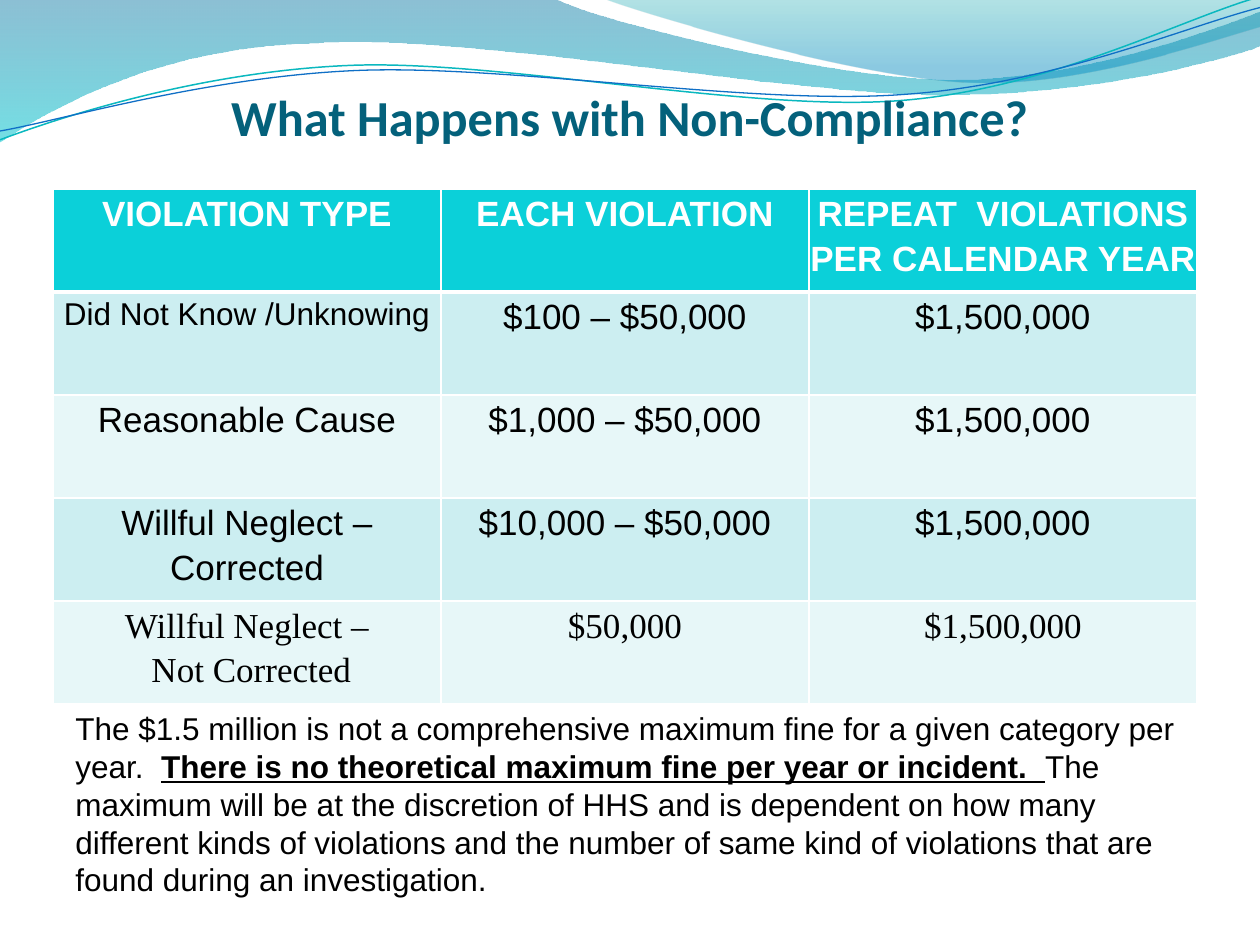
from dataclasses import dataclass

from lxml import etree
from pptx import Presentation
from pptx.dml.color import RGBColor
from pptx.enum.text import MSO_ANCHOR, MSO_AUTO_SIZE, PP_ALIGN
from pptx.oxml import parse_xml
from pptx.oxml.ns import nsdecls, qn
from pptx.util import Inches, Pt


@dataclass(frozen=True)
class Theme:
    title: str = "04617B"
    text: str = "000000"
    white: str = "FFFFFF"
    header: str = "0BD0D9"
    bands: tuple = ("CCEEF1", "E7F7F8")
    teal_line: str = "0AB8BF"
    blue_line: str = "0F6FC6"
    title_size: float = 28.8
    table_size: float = 20
    body_size: float = 18
    heading_font: str = "Calibri"
    body_font: str = "Arial"
    serif_font: str = "Times New Roman"


theme = Theme()


def add_text(paragraph, text, font=theme.body_font, size=theme.body_size,
             color=theme.text, bold=False, underline=False,
             align=PP_ALIGN.LEFT, spacing=1.0):
    paragraph.alignment = align
    paragraph.line_spacing = spacing
    run = paragraph.add_run()
    run.text = text
    run.font.name = font
    run.font.size = Pt(size)
    run.font.color.rgb = RGBColor.from_string(color)
    run.font.bold = bold
    run.font.underline = underline


def add_curve(shapes, start, segments, closed):
    """Draw lines (2 numbers) and cubic curves (6 numbers), in inches."""
    builder = shapes.build_freeform(Inches(start[0]), Inches(start[1]))
    builder.add_line_segments([(Inches(segment[-2]), Inches(segment[-1])) for segment in segments],
                              close=closed)
    shape = builder.convert_to_shape()
    shape.shadow.inherit = False
    # Turn straight segments into Bezier curves by adding their control points
    lines = list(shape.element.spPr.iter(qn("a:lnTo")))
    for line, segment in zip(lines, segments):
        if len(segment) == 6:
            line.tag = qn("a:cubicBezTo")
            for index in (0, 1):
                x, y = segment[2 * index:2 * index + 2]
                control = etree.Element(qn("a:pt"), x=str(Inches(x) - shape.left),
                                        y=str(Inches(y) - shape.top))
                line.insert(index, control)
    return shape


presentation = Presentation()
presentation.slide_width = Inches(10)
presentation.slide_height = Inches(7.5)
slide = presentation.slides.add_slide(presentation.slide_layouts[6])

# Translucent waves: start, segments, gradient stops (position, colour, opacity)
waves = [
    ((0, 0),
     [(4.4, -0.01), (4.76, 0.17, 6.64, 0.63, 7.58, 0.63), (8.53, 0.63, 9.58, 0.26, 10, 0.09),
      (10.01, 0.36), (9.83, 0.44, 8.7, 0.76, 7.46, 0.75), (6.22, 0.75, 3.82, 0.28, 2.57, 0.34),
      (1.29, 0.36, 0.46, 0.83, -0.01, 1.13)],
     [(0, "0074A1", 45), (100, "00C6CF", 55)]),
    ((4.79, -0.01),
     [(5.09, 0.11, 6.82, 0.62, 7.69, 0.65), (8.56, 0.69, 9.61, 0.32, 10, 0.21), (10, 0)],
     [(0, "00A1A9", 30), (80, "008BBF", 45)]),
]
for start, segments, stops in waves:
    wave = add_curve(slide.shapes, start, segments, closed=True)
    wave.line.fill.background()
    stop_xml = "".join(
        f'<a:gs pos="{position * 1000}"><a:srgbClr val="{color}">'
        f'<a:alpha val="{opacity * 1000}"/></a:srgbClr></a:gs>'
        for position, color, opacity in stops)
    gradient = parse_xml(f'<a:gradFill {nsdecls("a")} rotWithShape="1"><a:gsLst>{stop_xml}'
                         '</a:gsLst><a:lin ang="5400000" scaled="0"/></a:gradFill>')
    wave.element.spPr.find(qn("a:custGeom")).addnext(gradient)

# Thin wave lines
wave_lines = [
    ((0, 1.11),
     [(0.48, 0.93, 1.58, 0.57, 2.77, 0.52), (3.95, 0.47, 5.93, 0.89, 7.13, 0.8),
      (8.33, 0.71, 9.38, 0.15, 9.98, -0.02)], theme.teal_line, 0.85),
    ((0, 1.04),
     [(0.47, 0.96, 1.64, 0.61, 2.83, 0.56), (4.03, 0.51, 5.97, 0.84, 7.17, 0.75),
      (8.36, 0.67, 9.41, 0.21, 10, 0.06)], theme.blue_line, 0.75),
]
for start, segments, color, width in wave_lines:
    wave_line = add_curve(slide.shapes, start, segments, closed=False)
    wave_line.fill.background()
    wave_line.line.color.rgb = RGBColor.from_string(color)
    wave_line.line.width = Pt(width)

# Title
title_frame = slide.shapes.add_textbox(Inches(0.5), Inches(0.5), Inches(9), Inches(1.42)).text_frame
title_frame.word_wrap = True
title_frame.margin_left = title_frame.margin_right = 0
title_frame.margin_top = Inches(0.05)
title_frame.margin_bottom = Inches(0.76)
title_frame.vertical_anchor = MSO_ANCHOR.BOTTOM
add_text(title_frame.paragraphs[0], "What Happens with Non-Compliance?", font=theme.heading_font,
         size=theme.title_size, color=theme.title, bold=True, align=PP_ALIGN.CENTER)

# Penalty table
rows = [
    ("VIOLATION TYPE", "EACH VIOLATION", "REPEAT  VIOLATIONS PER CALENDAR YEAR"),
    ("Did Not Know /Unknowing", "$100 – $50,000", "$1,500,000"),
    ("Reasonable Cause", "$1,000 – $50,000", "$1,500,000"),
    ("Willful Neglect – Corrected", "$10,000 – $50,000", "$1,500,000"),
    ("Willful Neglect –\n Not Corrected", "$50,000", "$1,500,000"),
]
table_height = 4.09
table = slide.shapes.add_table(len(rows), 3, Inches(0.42), Inches(1.5),
                               Inches(9.08), Inches(table_height)).table
for column, width in zip(table.columns, (3.08, 2.92, 3.08)):
    column.width = Inches(width)
for row_index, row in enumerate(rows):
    table.rows[row_index].height = Inches(table_height / len(rows))
    is_header = row_index == 0
    is_last = row_index == len(rows) - 1
    for column_index, text in enumerate(row):
        cell = table.cell(row_index, column_index)
        cell.margin_left = cell.margin_right = cell.margin_top = cell.margin_bottom = 0

        # White borders, thicker below the header
        properties = cell._tc.get_or_add_tcPr()
        for side in "LRTB":
            thick = (is_header and side == "B") or (row_index == 1 and side == "T")
            border = etree.SubElement(properties, qn(f"a:ln{side}"), w=str(Pt(3 if thick else 1)))
            fill = etree.SubElement(border, qn("a:solidFill"))
            etree.SubElement(fill, qn("a:srgbClr"), val=theme.white)
        cell.fill.solid()
        cell.fill.fore_color.rgb = RGBColor.from_string(
            theme.header if is_header else theme.bands[(row_index - 1) % 2])

        frame = cell.text_frame
        is_small = row_index == 1 and column_index == 0
        for line_index, line in enumerate(text.split("\n")):
            paragraph = frame.add_paragraph() if line_index else frame.paragraphs[0]
            add_text(paragraph, line, bold=is_header, align=PP_ALIGN.CENTER, spacing=1.15,
                     font=theme.serif_font if is_last else theme.body_font,
                     size=theme.body_size if is_small else theme.table_size,
                     color=theme.white if is_header else theme.text)

# Note below the table
note_frame = slide.shapes.add_textbox(Inches(0.5), Inches(5.58), Inches(9), Inches(1.62)).text_frame
note_frame.word_wrap = True
note_frame.auto_size = MSO_AUTO_SIZE.SHAPE_TO_FIT_TEXT
note = note_frame.paragraphs[0]
add_text(note, "The $1.5 million is not a comprehensive maximum fine for a given category per year.  ")
add_text(note, "There is no theoretical maximum fine per year or incident.  ", bold=True, underline=True)
add_text(note, "The maximum will be at the discretion of HHS and is dependent on how many different kinds "
               "of violations and the number of same kind of violations that are found during an "
               "investigation.")

presentation.save("out.pptx")
